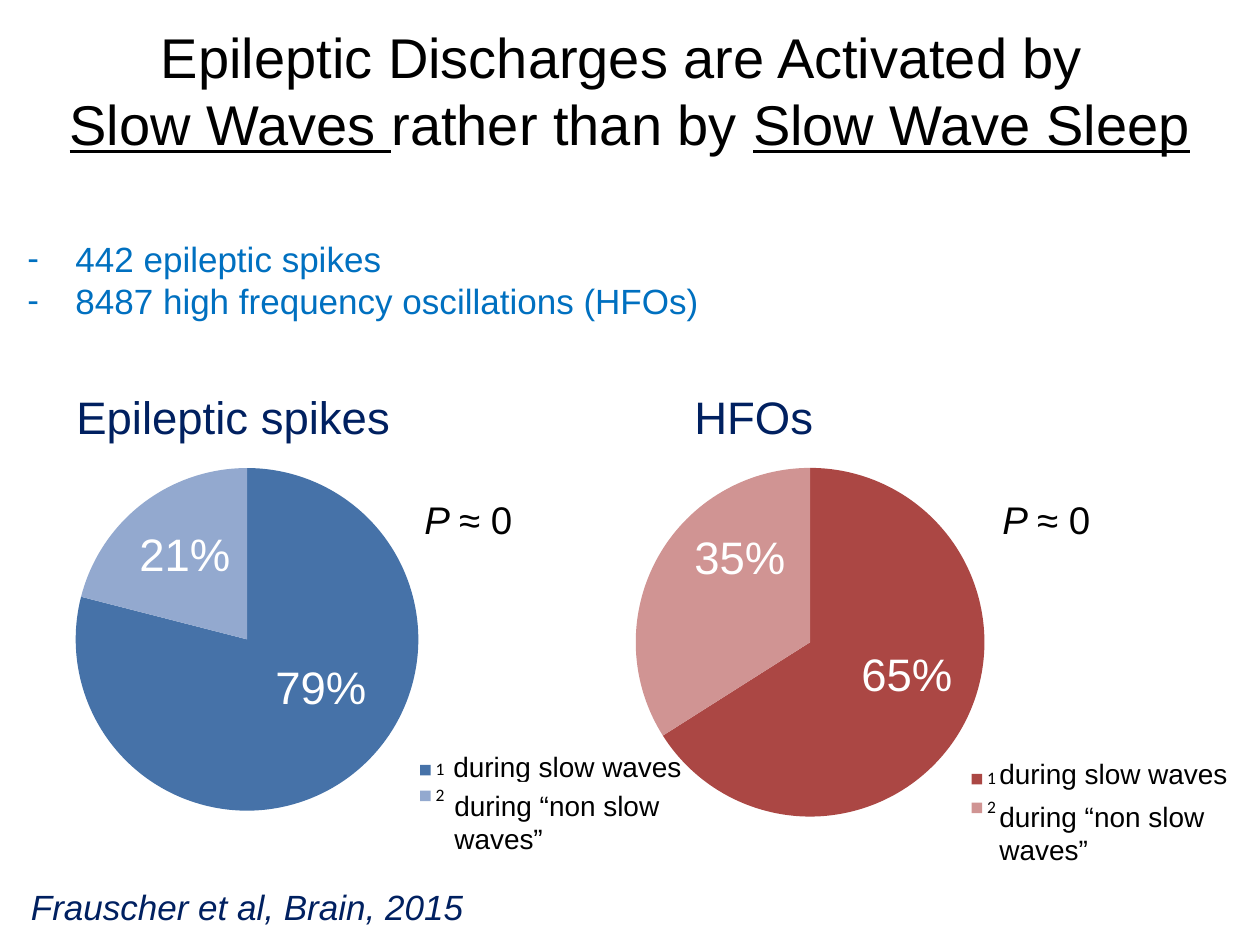
import pptx
import pptx.util
import pptx.chart.data
from lxml import etree
from pptx.dml.color import RGBColor
from pptx.enum.chart import XL_CHART_TYPE, XL_LEGEND_POSITION
from pptx.enum.text import MSO_ANCHOR, PP_ALIGN
from pptx.oxml.ns import qn

PX = 914400 / 126
NAVY, BLUE, BLACK, WHITE = "002060", "0070C0", "000000", "FFFFFF"

TITLE = [
    [("Epileptic Discharges are Activated by ", "")],
    [("Slow Waves ", "u"), ("rather than by ", ""), ("Slow Wave Sleep", "u")],
]
COUNTS = [[("442 epileptic spikes", "")], [("8487 high frequency oscillations (HFOs)", "")]]
CITATION = [[("Frauscher et al, Brain, 2015", "i")]]
P_VALUE = [[("P ", "i"), ("≈ 0", "")]]
LEGEND = ["during slow waves", "during “non slow waves”"]

PIES = [
    dict(heading="HFOs", heading_box=(682, 383, 504, 68),
         legend_boxes=[(987, 750, 266, 47), (987, 793, 257, 81)],
         chart=(581, 451, 507, 383), plot=(636, 468, 349, 349), key=(967, 760, 34, 67),
         values=[66, 34], colors=["AB4744", "D09493"],
         shares=[("65%", 849, 640), ("35%", 682, 523)], p_at=(990, 490)),
    dict(heading="Epileptic spikes", heading_box=(64, 383, 365, 68),
         legend_boxes=[(441, 743, 258, 47), (442, 782, 257, 81)],
         chart=(-44, 451, 630, 378), plot=(76, 468, 343, 343), key=(415, 754, 34, 58),
         values=[79, 21], colors=["4672A8", "93A9CF"],
         shares=[("79%", 263, 653), ("21%", 127, 520)], p_at=(412, 490)),
]


def emu(*lengths):
    return [round(n * PX) for n in lengths]


def rgb(code):
    return RGBColor.from_string(code)


def add_text(s, box, paragraphs, size, color, align=PP_ALIGN.LEFT,
             anchor=MSO_ANCHOR.TOP, fill=None, wrap=True):
    sp = s.shapes.add_textbox(*emu(*box))
    if fill:
        sp.fill.solid()
        sp.fill.fore_color.rgb = rgb(fill)
    tf = sp.text_frame
    tf.word_wrap = wrap
    tf.vertical_anchor = anchor
    for i, runs in enumerate(paragraphs):
        p = tf.paragraphs[0] if i == 0 else tf.add_paragraph()
        p.alignment = align
        for text, style in runs:
            r = p.add_run()
            r.text = text
            r.font.name = "Arial"
            r.font.size = pptx.util.Pt(size)
            r.font.color.rgb = rgb(color)
            r.font.italic = "i" in style
            r.font.underline = "u" in style
    return tf


def add_dashes(tf):
    for p in tf.paragraphs:
        pPr = p._p.get_or_add_pPr()
        indent = emu(48)[0]
        pPr.set("marL", str(indent))
        pPr.set("indent", str(-indent))
        etree.SubElement(pPr, qn("a:buFont")).set("typeface", "Arial")
        etree.SubElement(pPr, qn("a:buChar")).set("char", "-")


def place(element, after, chart_box, box, inner=False):
    for old in element.findall(qn("c:layout")):
        element.remove(old)
    layout = etree.Element(qn("c:layout"))
    manual = etree.SubElement(layout, qn("c:manualLayout"))
    left, top, width, height = chart_box
    x, y, w, h = box
    values = [("xMode", "edge"), ("yMode", "edge"),
              ("x", round((x - left) / width, 3)), ("y", round((y - top) / height, 3)),
              ("w", round(w / width, 3)), ("h", round(h / height, 3))]
    if inner:
        values.insert(0, ("layoutTarget", "inner"))
    for tag, value in values:
        etree.SubElement(manual, qn("c:" + tag)).set("val", str(value))
    if after is None:
        element.insert(0, layout)
    else:
        after.addnext(layout)


def add_pie(s, pie):
    data = pptx.chart.data.CategoryChartData()
    data.categories = ["1", "2"]
    data.add_series("Series 1", pie["values"])
    chart = s.shapes.add_chart(XL_CHART_TYPE.PIE, *emu(*pie["chart"]), data).chart
    chart.has_title = False
    chart.font.name = "Calibri"
    chart.font.size = pptx.util.Pt(10)
    chart.font.color.rgb = rgb(BLACK)
    chart.has_legend = True
    chart.legend.position = XL_LEGEND_POSITION.RIGHT
    chart.legend.include_in_layout = False
    for i, color in enumerate(pie["colors"]):
        fill = chart.plots[0].series[0].points[i].format.fill
        fill.solid()
        fill.fore_color.rgb = rgb(color)
    area = chart._chartSpace.find(".//" + qn("c:plotArea"))
    place(area, None, pie["chart"], pie["plot"], inner=True)
    legend = chart.legend._element
    place(legend, legend.find(qn("c:legendPos")), pie["chart"], pie["key"])


def main():
    prs = pptx.Presentation()
    prs.slide_width, prs.slide_height = emu(1260, 945)
    s = prs.slides.add_slide(prs.slide_layouts[6])

    add_text(s, (-19, 882, 495, 50), CITATION, 20, NAVY, PP_ALIGN.RIGHT, MSO_ANCHOR.MIDDLE)
    add_text(s, (0, 16, 1260, 144), TITLE, 32, BLACK, PP_ALIGN.CENTER)
    add_dashes(add_text(s, (15, 231, 863, 97), COUNTS, 20, BLUE))

    for pie in PIES:
        add_text(s, pie["heading_box"], [[(pie["heading"], "")]], 26, NAVY, fill=WHITE)
        for box, label in zip(pie["legend_boxes"], LEGEND):
            add_text(s, box, [[(label, "")]], 16, BLACK, fill=WHITE)
    for pie in PIES:
        add_pie(s, pie)
        for share, x, y in pie["shares"]:
            add_text(s, (x, y, 117, 68), [[(share, "")]], 26, WHITE, wrap=False)
        add_text(s, (*pie["p_at"], 116, 59), P_VALUE, 22, BLACK, wrap=False)

    prs.save("out.pptx")


if __name__ == "__main__":
    main()
